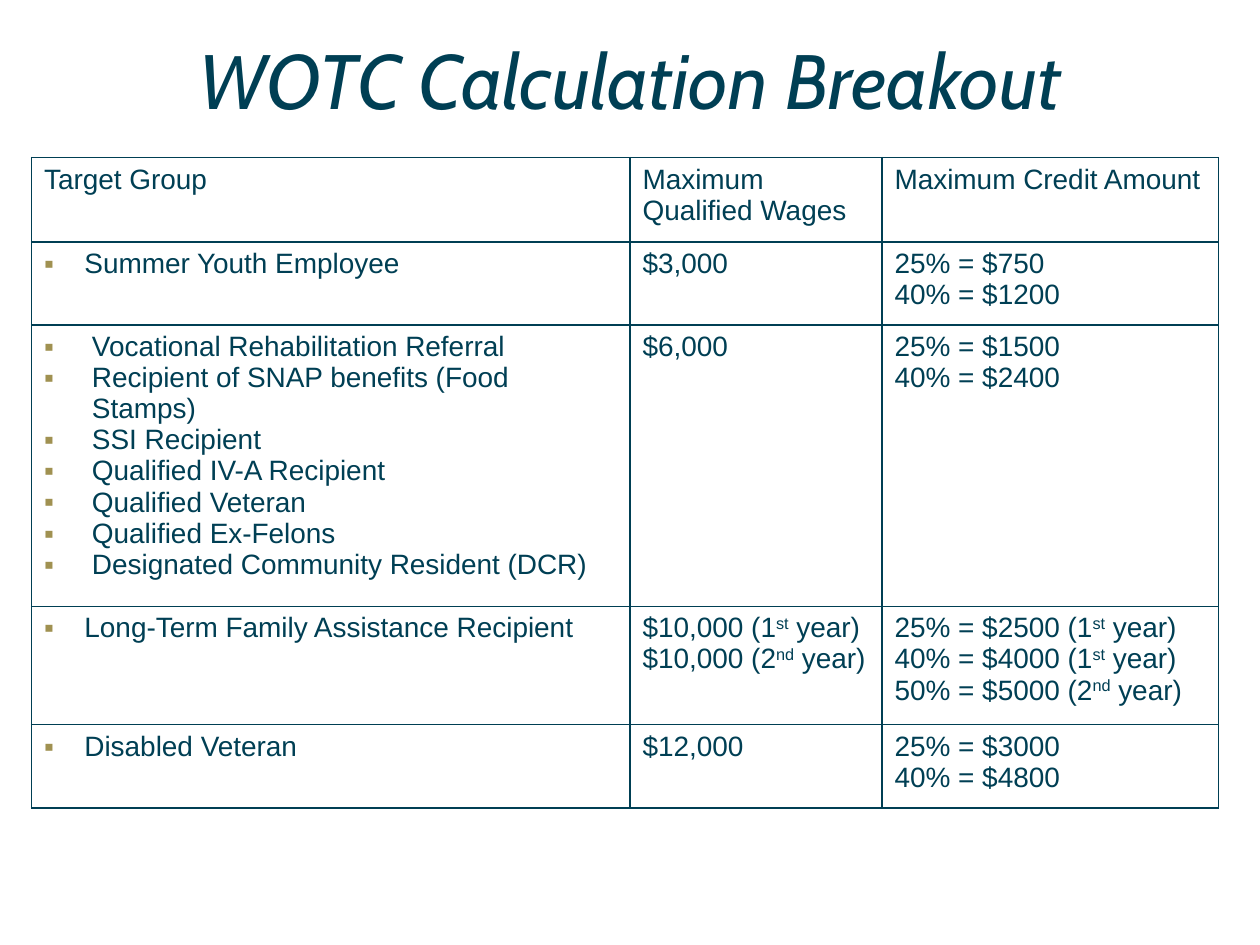
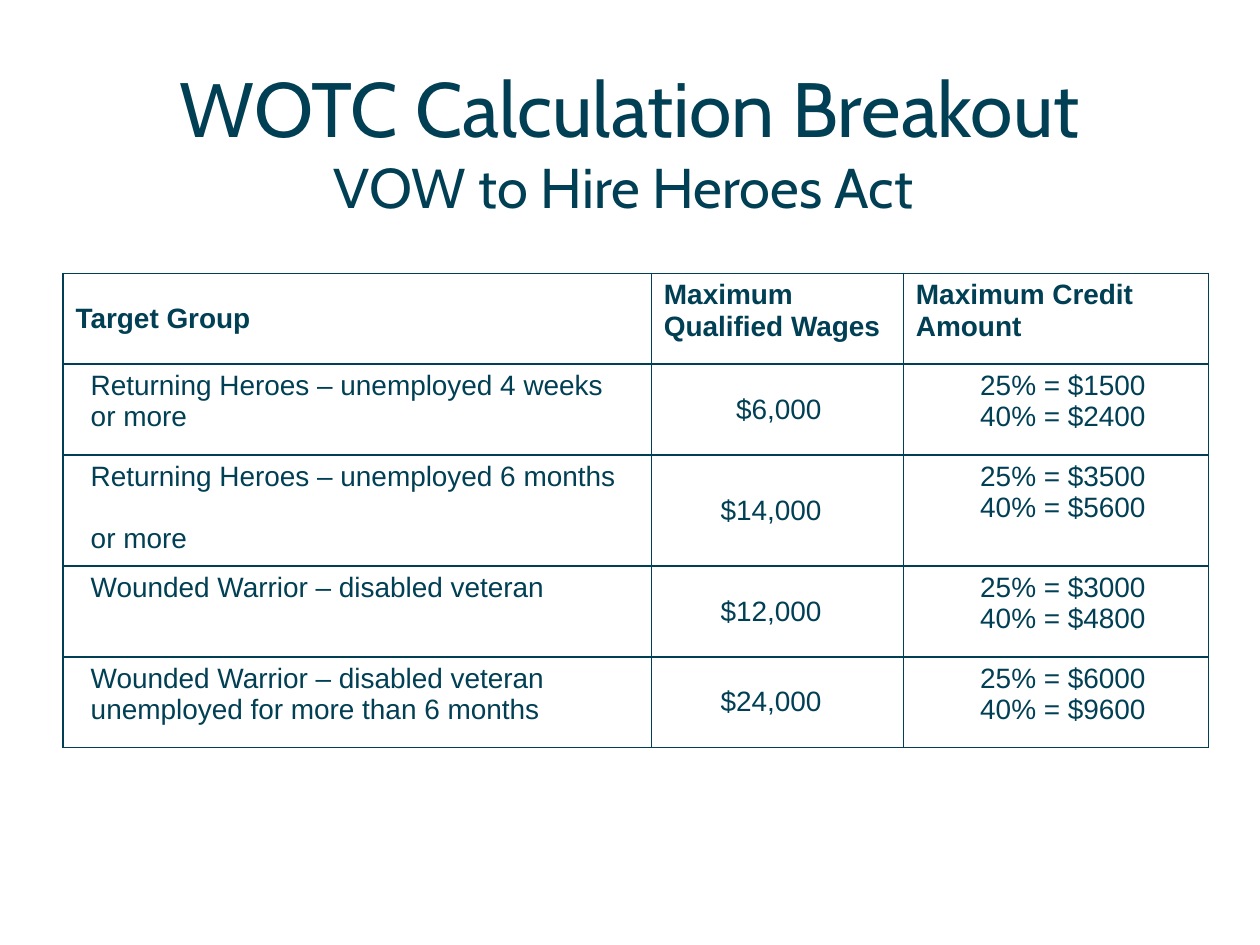
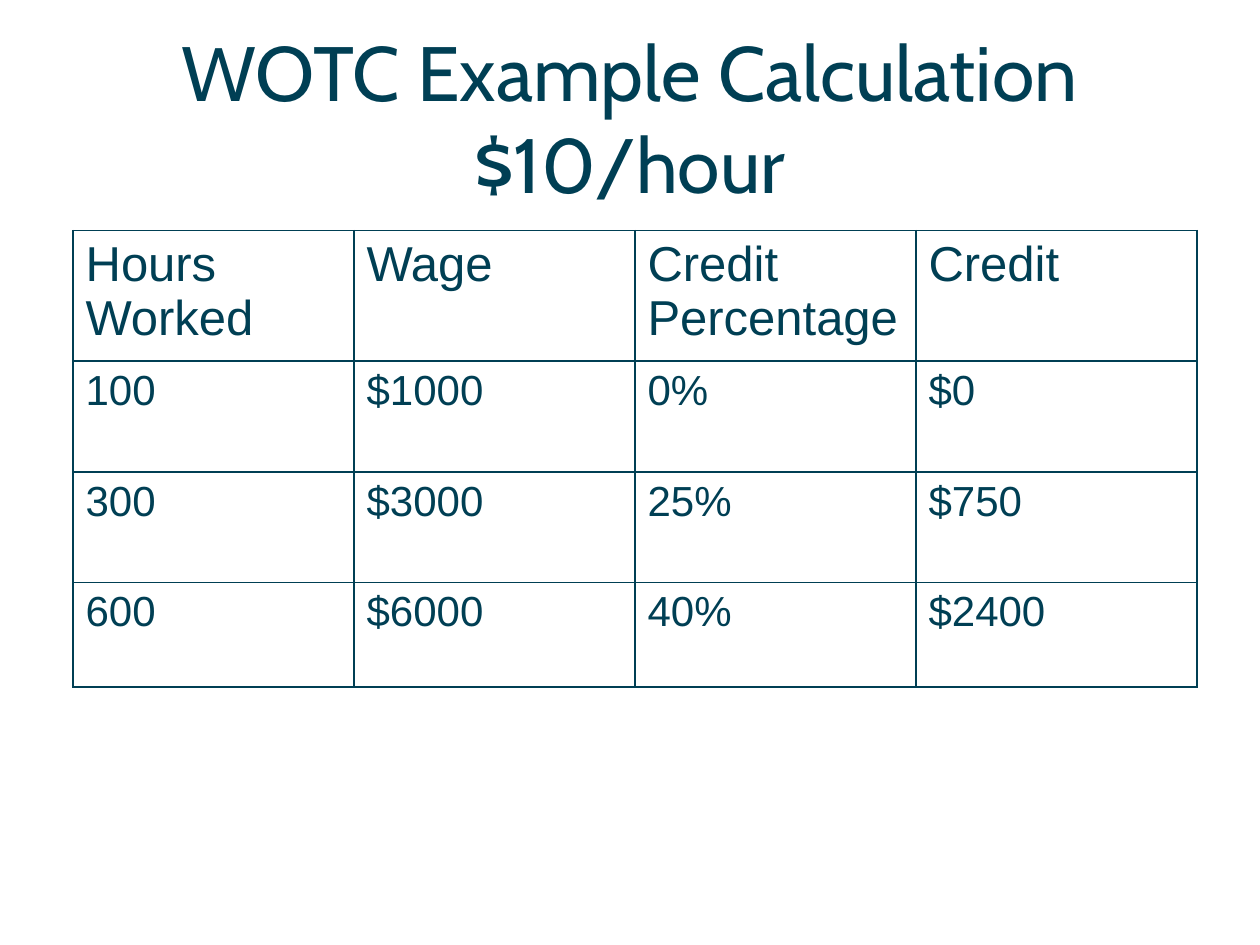
from lxml.etree import SubElement
from pptx import Presentation
from pptx.dml.color import RGBColor
from pptx.enum.text import MSO_ANCHOR, PP_ALIGN
from pptx.oxml.ns import qn
from pptx.util import Inches, Pt

COLOURS = {"ink": "003F54", "bullet": "A09151", "paper": "FFFFFF"}
TITLE_FONT, TABLE_FONT = "Cabin", "Arial"
BORDER_WIDTH = Pt(1)

# Content: in a cell, "\n" starts a paragraph, "\v" breaks a line, "^" encloses superscript
WAGE_HEADERS = ("Target Group", "Maximum Qualified Wages", "Maximum Credit Amount")
SLIDES = [
    {
        "title": [("WOTC Calculation Breakout", 44)], "title_box": (0.5, 0, 9, 1.25),
        "title_italic": True,
        "table_at": (0.25, 1.25),
        "columns": (4.75, 2, 2.67), "row_heights": (0.67, 0.66, 2.07, 0.94, 0.66),
        "column_styles": ({"bullet": True}, {}, {}),
        "rows": [
            WAGE_HEADERS,
            ("Summer Youth Employee", "$3,000", "25% = $750\n40% = $1200"),
            ("Vocational Rehabilitation Referral\nRecipient of SNAP benefits (Food Stamps)\n"
             "SSI Recipient\nQualified IV-A Recipient\nQualified Veteran\n"
             "Qualified Ex-Felons\nDesignated Community Resident (DCR)",
             "$6,000", "25% = $1500\n40% = $2400"),
            ("Long-Term Family Assistance Recipient",
             "$10,000 (1^st^ year)\n$10,000 (2^nd^ year)",
             "25% = $2500 (1^st^ year)\n40% = $4000 (1^st^ year)\n50% = $5000 (2^nd^ year)"),
            ("Disabled Veteran", "$12,000", "25% = $3000\n40% = $4800"),
        ],
    },
    {
        "title": [("WOTC Calculation Breakout", 44), ("VOW to Hire Heroes Act ", 32)],
        "title_box": (0.5, 0.3, 9, 1.62),
        "table_at": (0.5, 2.17),
        "columns": (4.67, 2, 2.42), "row_heights": (0.72, 0.72, 0.84, 0.72, 0.72),
        "header_bold": True, "middle_headers": (0,),
        "column_styles": ({"indent": 0.12, "gap": 18}, {"tab": 1.25, "middle": True},
                          {"indent": 0.51}),
        "rows": [
            WAGE_HEADERS,
            ("Returning Heroes – unemployed 4 weeks \vor more", "\t$6,000",
             "25% = $1500\n40% = $2400"),
            ("Returning Heroes – unemployed 6 months\nor more", "\t$14,000",
             "25% = $3500\n40% = $5600"),
            ("Wounded Warrior – disabled veteran", "\t$12,000", "25% = $3000\n40% = $4800"),
            ("Wounded Warrior – disabled veteran\vunemployed for more than 6 months",
             "\t$24,000", "25% = $6000\n40% = $9600"),
        ],
    },
    {
        "title": [("WOTC Example Calculation", 44), ("$10/hour", 44)],
        "title_box": (0.5, 0.3, 9, 1.25),
        "table_at": (0.58, 1.83),
        "columns": (2.23,) * 4, "row_heights": (1, 0.88, 0.88, 0.83),
        "header_size": 28, "body_size": 24,
        "column_styles": ({},) * 4,
        "rows": [
            ("Hours Worked", "Wage", "Credit Percentage", "Credit"),
            ("100", "$1000", "0%", "$0"),
            ("300", "$3000", "25%", "$750"),
            ("600", "$6000", "40%", "$2400"),
        ],
    },
]


def add_run(paragraph, text, font_name, size, bold=False, italic=False):
    run = paragraph.add_run()
    run.text = text
    run.font.name, run.font.size = font_name, Pt(size)
    run.font.bold, run.font.italic = bold, italic
    run.font.color.rgb = RGBColor.from_string(COLOURS["ink"])
    return run


def add_title(slide, content):
    box = slide.shapes.add_textbox(*map(Inches, content["title_box"]))
    frame = box.text_frame
    frame.word_wrap = True
    frame.vertical_anchor = MSO_ANCHOR.MIDDLE
    paragraph = frame.paragraphs[0]
    paragraph.alignment = PP_ALIGN.CENTER
    for index, (line, size) in enumerate(content["title"]):
        if index:
            paragraph.add_line_break()
        add_run(paragraph, line, TITLE_FONT, size, italic=content.get("title_italic", False))


def set_borders(cell):
    properties = cell._tc.get_or_add_tcPr()
    for position, side in enumerate(("a:lnL", "a:lnR", "a:lnT", "a:lnB")):
        line = properties.makeelement(qn(side), {"w": str(BORDER_WIDTH)})
        fill = SubElement(line, qn("a:solidFill"))
        SubElement(fill, qn("a:srgbClr"), val=COLOURS["ink"])
        properties.insert(position, line)


def style_paragraph(paragraph, style, is_list):
    properties = paragraph._p.get_or_add_pPr()
    if style.get("bullet"):
        indent = Inches(0.38 if is_list else 0.32)
        properties.set("marL", str(indent))
        properties.set("indent", str(-indent))
        colour = SubElement(properties, qn("a:buClr"))
        SubElement(colour, qn("a:srgbClr"), val=COLOURS["bullet"])
        SubElement(properties, qn("a:buFont"), typeface=TABLE_FONT)
        SubElement(properties, qn("a:buChar"), char="▪")
    if "indent" in style:
        properties.set("marL", str(Inches(style["indent"])))
        properties.set("indent", "0")
    if "tab" in style:
        tabs = SubElement(properties, qn("a:tabLst"))
        SubElement(tabs, qn("a:tab"), pos=str(Inches(style["tab"])), algn="r")


def fill_cell(cell, text, style, size, bold):
    cell.fill.solid()
    cell.fill.fore_color.rgb = RGBColor.from_string(COLOURS["paper"])
    set_borders(cell)
    cell.vertical_anchor = MSO_ANCHOR.MIDDLE if style.get("middle") else MSO_ANCHOR.TOP
    frame = cell.text_frame
    entries = text.split("\n")
    for index, entry in enumerate(entries):
        paragraph = frame.add_paragraph() if index else frame.paragraphs[0]
        style_paragraph(paragraph, style, len(entries) > 1)
        if index and "gap" in style:
            paragraph.space_before = Pt(style["gap"])
        for line_index, line in enumerate(entry.split("\v")):
            if line_index:
                paragraph.add_line_break()
            for part_index, part in enumerate(line.split("^")):
                run = add_run(paragraph, part, TABLE_FONT, size, bold)
                if part_index % 2:
                    run._r.get_or_add_rPr().set("baseline", "30000")


def add_grid(slide, content):
    columns, heights, rows = content["columns"], content["row_heights"], content["rows"]
    left, top = content["table_at"]
    table = slide.shapes.add_table(len(rows), len(columns), Inches(left), Inches(top),
                                   Inches(sum(columns)), Inches(sum(heights))).table
    table.horz_banding = False
    for column, width in zip(table.columns, columns):
        column.width = Inches(width)
    for row, height in zip(table.rows, heights):
        row.height = Inches(height)
    for row_index, texts in enumerate(rows):
        is_header = row_index == 0
        size = content.get("header_size" if is_header else "body_size", 16)
        bold = is_header and content.get("header_bold", False)
        for column_index, text in enumerate(texts):
            style = content["column_styles"][column_index]
            if is_header:
                style = {"middle": column_index in content.get("middle_headers", ())}
            fill_cell(table.cell(row_index, column_index), text, style, size, bold)


def main():
    presentation = Presentation()
    presentation.slide_width, presentation.slide_height = Inches(10), Inches(7.5)
    for content in SLIDES:
        slide = presentation.slides.add_slide(presentation.slide_layouts[6])
        add_title(slide, content)
        add_grid(slide, content)
    presentation.save("out.pptx")


if __name__ == "__main__":
    main()
